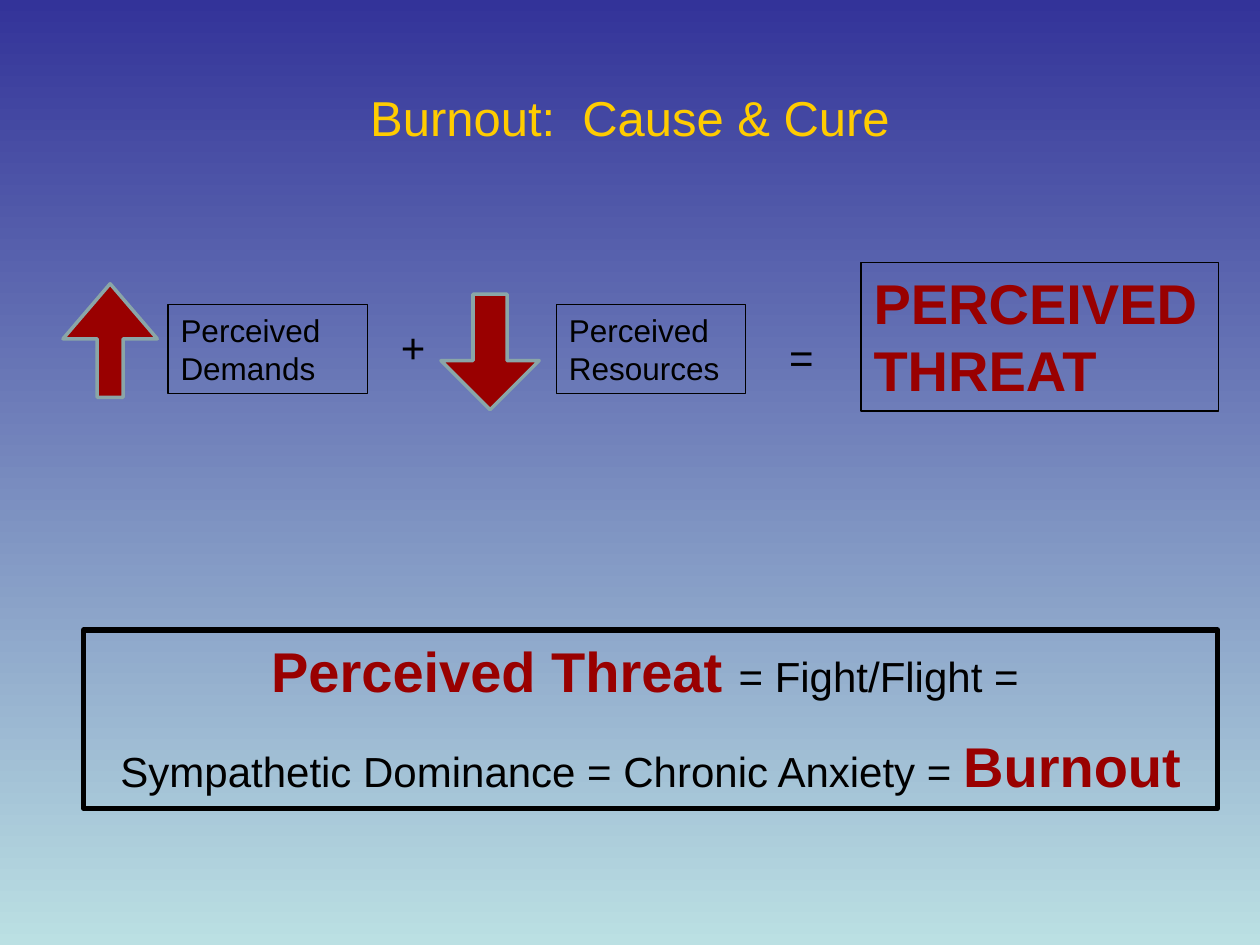
import pptx
import pptx.dml.color
import pptx.enum.shapes
import pptx.enum.text
import pptx.util

Cm = pptx.util.Cm
Pt = pptx.util.Pt
Align = pptx.enum.text.PP_ALIGN
Anchor = pptx.enum.text.MSO_ANCHOR

COLORS = {
    "top": "333399",
    "base": "BBE0E3",
    "title": "FFCC00",
    "red": "990000",
    "black": "000000",
    "edge": "8AA6A8",
}


def color(name):
    return pptx.dml.color.RGBColor.from_string(COLORS[name])


def style(font, size, tint, bold=False):
    font.name = "Arial"
    font.size = Pt(size)
    font.bold = bold
    font.color.rgb = color(tint)


def add_box(slide, place, line=None):
    """Add a text box, framed when a line width is given."""
    box = slide.shapes.add_textbox(*map(Cm, place))
    box.text_frame.word_wrap = True
    if line:
        box.line.color.rgb = color("black")
        box.line.width = Pt(line)
    return box


def add_label(slide, place, text, size, tint="black", bold=False, line=None):
    box = add_box(slide, place, line)
    para = box.text_frame.paragraphs[0]
    para.text = text
    style(para.font, size, tint, bold)
    return box


def add_arrow(slide, place, shaft, head, turn=0):
    kind = pptx.enum.shapes.MSO_SHAPE.DOWN_ARROW
    arrow = slide.shapes.add_shape(kind, *map(Cm, place))
    arrow.shadow.inherit = False
    arrow.adjustments[0] = shaft
    arrow.adjustments[1] = head
    arrow.rotation = turn
    arrow.fill.solid()
    arrow.fill.fore_color.rgb = color("red")
    arrow.line.color.rgb = color("edge")
    arrow.line.width = Pt(2)


def add_chain(slide, place, lines):
    """Add the framed summary, with key words large and red."""
    frame = add_box(slide, place, 3).text_frame
    for index, parts in enumerate(lines):
        para = frame.paragraphs[0] if index == 0 else frame.add_paragraph()
        para.alignment = Align.CENTER
        if index:
            para.space_before = Pt(16)
        for text, key in parts:
            run = para.add_run()
            run.text = text
            if key:
                style(run.font, 32, "red", True)
            else:
                style(run.font, 24, "black")


def paint(slide):
    fill = slide.background.fill
    fill.gradient()
    fill.gradient_angle = 270
    for stop, name, spot in zip(fill.gradient_stops, ("top", "base"), (0, 1)):
        stop.color.rgb = color(name)
        stop.position = spot


def main():
    deck = pptx.Presentation()
    deck.slide_width = Cm(25.4)
    deck.slide_height = Cm(19.05)
    slide = deck.slides.add_slide(deck.slide_layouts[6])
    paint(slide)

    # Title
    title = add_label(slide, (1.27, 0.76, 22.86, 3.18),
                      "Burnout:  Cause & Cure", 28, "title")
    title.text_frame.vertical_anchor = Anchor.MIDDLE
    title.text_frame.paragraphs[0].alignment = Align.CENTER

    # Summary
    add_chain(slide, (1.69, 12.7, 22.86, 3.6), [
        [("Perceived Threat ", True), ("= Fight/Flight = ", False)],
        [("Sympathetic Dominance = Chronic Anxiety = ", False),
         ("Burnout", True)],
    ])

    # Sum: demands up, resources down, threat
    add_arrow(slide, (1.27, 5.72, 1.9, 2.29), 0.275, 0.584, 180)
    add_label(slide, (3.39, 6.14, 4.02, 1.8), "Perceived Demands", 18, line=0.75)
    add_label(slide, (7.83, 6.35, 1.06, 1.28), "+", 24)
    add_arrow(slide, (8.89, 5.93, 1.98, 2.33), 0.347, 0.5)
    add_label(slide, (11.22, 6.14, 3.81, 1.8), "Perceived Resources", 18, line=0.75)
    add_label(slide, (15.66, 6.56, 1.27, 1.28), "=", 24)
    add_label(slide, (17.36, 5.29, 7.2, 3), "PERCEIVED THREAT", 32, "red", True, 0.75)

    deck.save("out.pptx")


if __name__ == "__main__":
    main()
